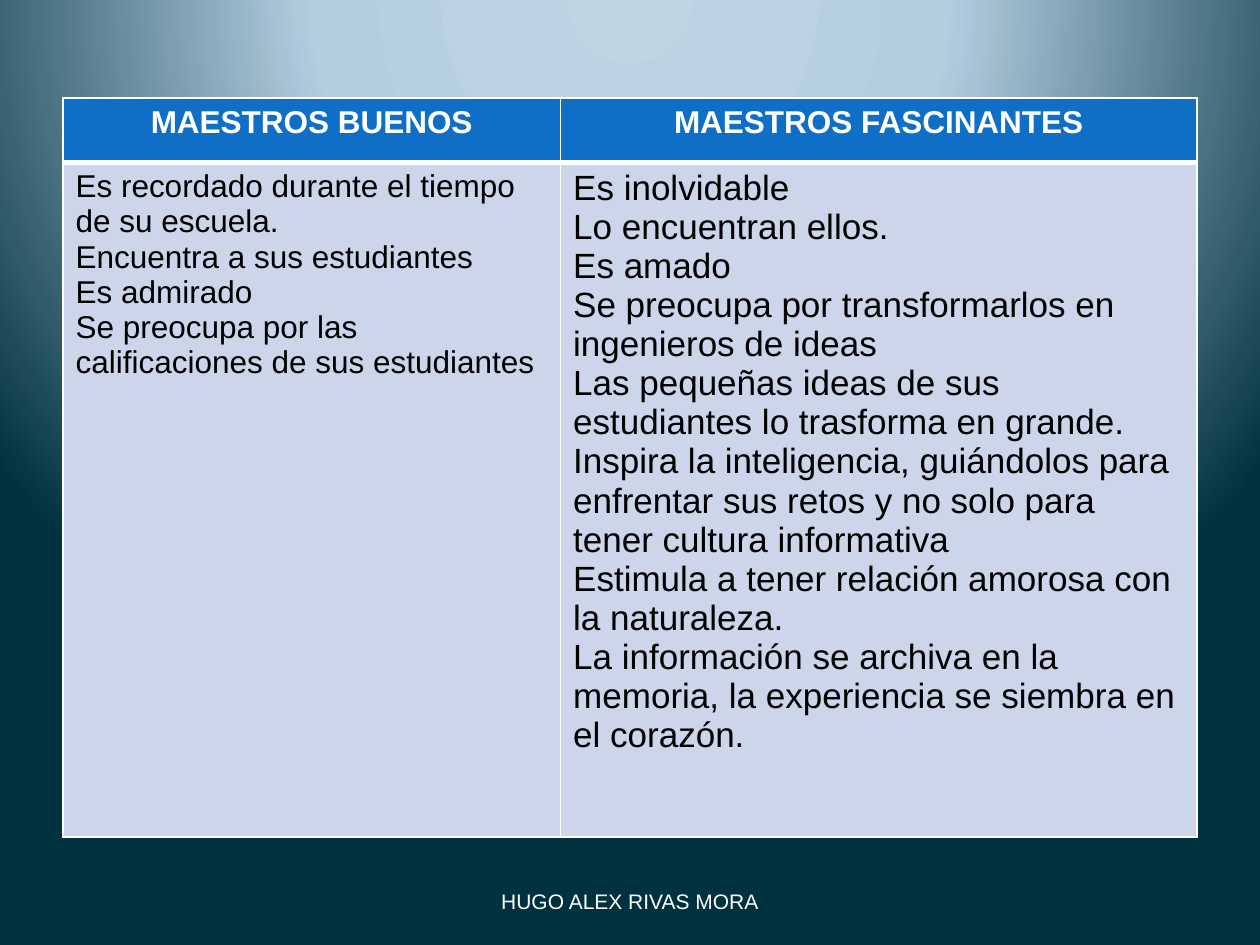
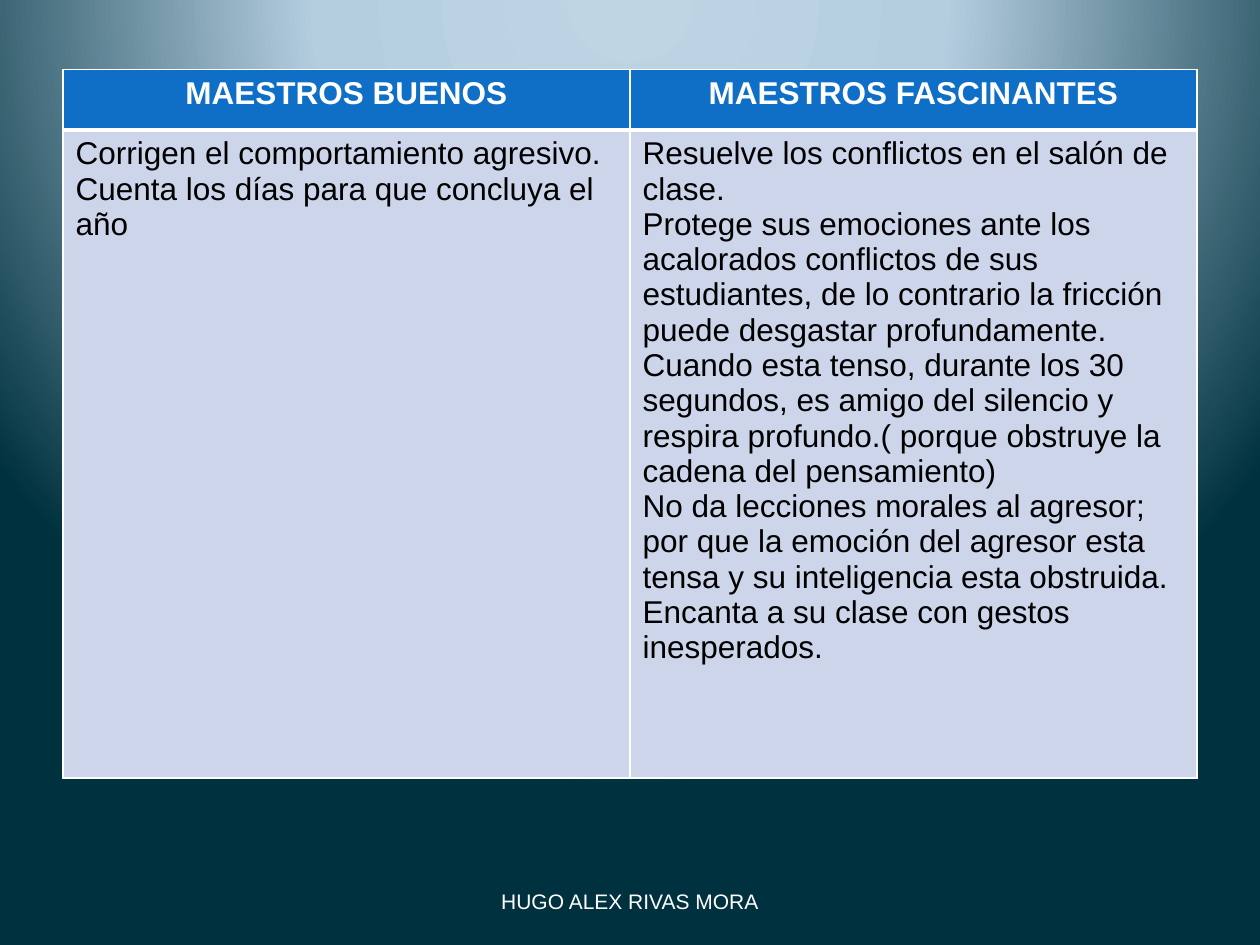
import dataclasses

import pptx
import pptx.dml.color
import pptx.enum.text
import pptx.oxml
import pptx.oxml.ns
import pptx.util

Cm = pptx.util.Cm
Pt = pptx.util.Pt
PP_ALIGN = pptx.enum.text.PP_ALIGN
NS = pptx.oxml.ns.nsdecls("a")


@dataclasses.dataclass(frozen=True)
class Theme:
    font: str = "Arial"
    white: str = "FFFFFF"
    black: str = "000000"
    header_fill: str = "0F6FC6"
    body_fill: str = "CCD5EA"
    glow: tuple = ((0, "BFD5E4"), (40, "B4CEE0"), (100, "00313F"))
    footer_size: int = 12
    text_size: int = 18
    large_size: int = 20
    thin: int = 1
    thick: int = 3


THEME = Theme()
WIDTH, HEIGHT = Cm(25.4), Cm(19.05)
MARGIN = Cm(1.27)
HEADERS = ("MAESTROS BUENOS", "MAESTROS FASCINANTES")
FOOTER = "HUGO ALEX RIVAS MORA"

SLIDES = [
    {
        "top": Cm(1.98),
        "cols": (Cm(10.03), Cm(12.83)),
        "rows": (Cm(1.3), Cm(13.59)),
        "sizes": (THEME.text_size, THEME.large_size),
        "bodies": (
            ["Es recordado durante el tiempo de su escuela.",
             "Encuentra a sus estudiantes",
             "Es admirado",
             "Se preocupa por las calificaciones de sus estudiantes"],
            ["Es inolvidable",
             "Lo encuentran ellos.",
             "Es amado",
             "Se preocupa por transformarlos en ingenieros de ideas",
             "Las pequeñas ideas de sus estudiantes lo trasforma en grande.",
             "Inspira la inteligencia, guiándolos para enfrentar sus retos "
             "y no solo para tener cultura informativa",
             "Estimula a tener relación amorosa con la naturaleza.",
             "La información se archiva en la memoria, la experiencia se "
             "siembra en el corazón."],
        ),
    },
    {
        "top": Cm(1.4),
        "cols": (Cm(11.43), Cm(11.43)),
        "rows": (Cm(1.22), Cm(13.06)),
        "sizes": (THEME.text_size, THEME.text_size),
        "bodies": (
            ["Corrigen el comportamiento agresivo.",
             "Cuenta los días para que concluya el año"],
            ["Resuelve los conflictos en el salón de clase.",
             "Protege sus emociones ante los acalorados conflictos de sus "
             "estudiantes, de lo contrario la fricción puede desgastar "
             "profundamente.",
             "Cuando esta tenso, durante los 30 segundos, es amigo del "
             "silencio y respira profundo.( porque obstruye la cadena del "
             "pensamiento)",
             "No da lecciones morales al agresor; por que la emoción del "
             "agresor esta tensa y su inteligencia esta obstruida.",
             "Encanta a su clase con gestos inesperados."],
        ),
    },
]


def rgb(value):
    return pptx.dml.color.RGBColor.from_string(value)


def write_text(tf, lines, *, size, color, bold=False, align=PP_ALIGN.LEFT):
    """Write one paragraph for each line."""
    tf.word_wrap = True
    for i, line in enumerate(lines):
        p = tf.paragraphs[0] if i == 0 else tf.add_paragraph()
        p.alignment = align
        r = p.add_run()
        r.text = line
        r.font.name = THEME.font
        r.font.size = Pt(size)
        r.font.bold = bold
        r.font.color.rgb = rgb(color)


def set_background(master):
    """Give the master a circular gradient centred above the slide."""
    fill = master.background.fill
    fill.gradient()
    grad = master.element.find(".//" + pptx.oxml.ns.qn("a:gradFill"))
    stops = "".join(
        f'<a:gs pos="{pos * 1000}"><a:srgbClr val="{color}"/></a:gs>'
        for pos, color in THEME.glow)
    grad.getparent().replace(grad, pptx.oxml.parse_xml(
        f'<a:gradFill {NS} rotWithShape="1"><a:gsLst>{stops}</a:gsLst>'
        '<a:path path="circle"><a:fillToRect l="50000" t="-80000" '
        'r="50000" b="180000"/></a:path></a:gradFill>'))


def style_cell(cell, fill, *, top, bottom):
    """Fill a cell and draw its white borders, with widths in points."""
    cell.fill.solid()
    cell.fill.fore_color.rgb = rgb(fill)
    tc_pr = cell._tc.get_or_add_tcPr()
    widths = {"L": THEME.thin, "R": THEME.thin, "T": top, "B": bottom}
    for i, (side, width) in enumerate(widths.items()):
        tc_pr.insert(i, pptx.oxml.parse_xml(
            f'<a:ln{side} {NS} w="{Pt(width)}"><a:solidFill>'
            f'<a:srgbClr val="{THEME.white}"/></a:solidFill></a:ln{side}>'))


def add_comparison(s, top, cols, rows, sizes, bodies):
    table = s.shapes.add_table(
        len(rows), len(cols), MARGIN, top, sum(cols), sum(rows)).table
    table.first_row = table.horz_banding = False
    for row, height in zip(table.rows, rows):
        row.height = height
    for i, width in enumerate(cols):
        table.columns[i].width = width
        header, body = table.cell(0, i), table.cell(1, i)
        style_cell(header, THEME.header_fill, top=THEME.thin, bottom=THEME.thick)
        write_text(header.text_frame, [HEADERS[i]], size=THEME.text_size,
                   color=THEME.white, bold=True, align=PP_ALIGN.CENTER)
        style_cell(body, THEME.body_fill, top=THEME.thick, bottom=THEME.thin)
        write_text(body.text_frame, bodies[i], size=sizes[i], color=THEME.black)


def add_footer(s):
    width = Cm(8.05)
    sp = s.shapes.add_textbox((WIDTH - width) // 2, Cm(17.65), width, Cm(1.02))
    tf = sp.text_frame
    tf.vertical_anchor = pptx.enum.text.MSO_ANCHOR.MIDDLE
    write_text(tf, [FOOTER], size=THEME.footer_size, color=THEME.white,
               align=PP_ALIGN.CENTER)


def main():
    prs = pptx.Presentation()
    prs.slide_width, prs.slide_height = WIDTH, HEIGHT
    set_background(prs.slide_master)
    for content in SLIDES:
        s = prs.slides.add_slide(prs.slide_layouts[6])
        add_comparison(s, **content)
        add_footer(s)
    prs.save("out.pptx")


if __name__ == "__main__":
    main()
